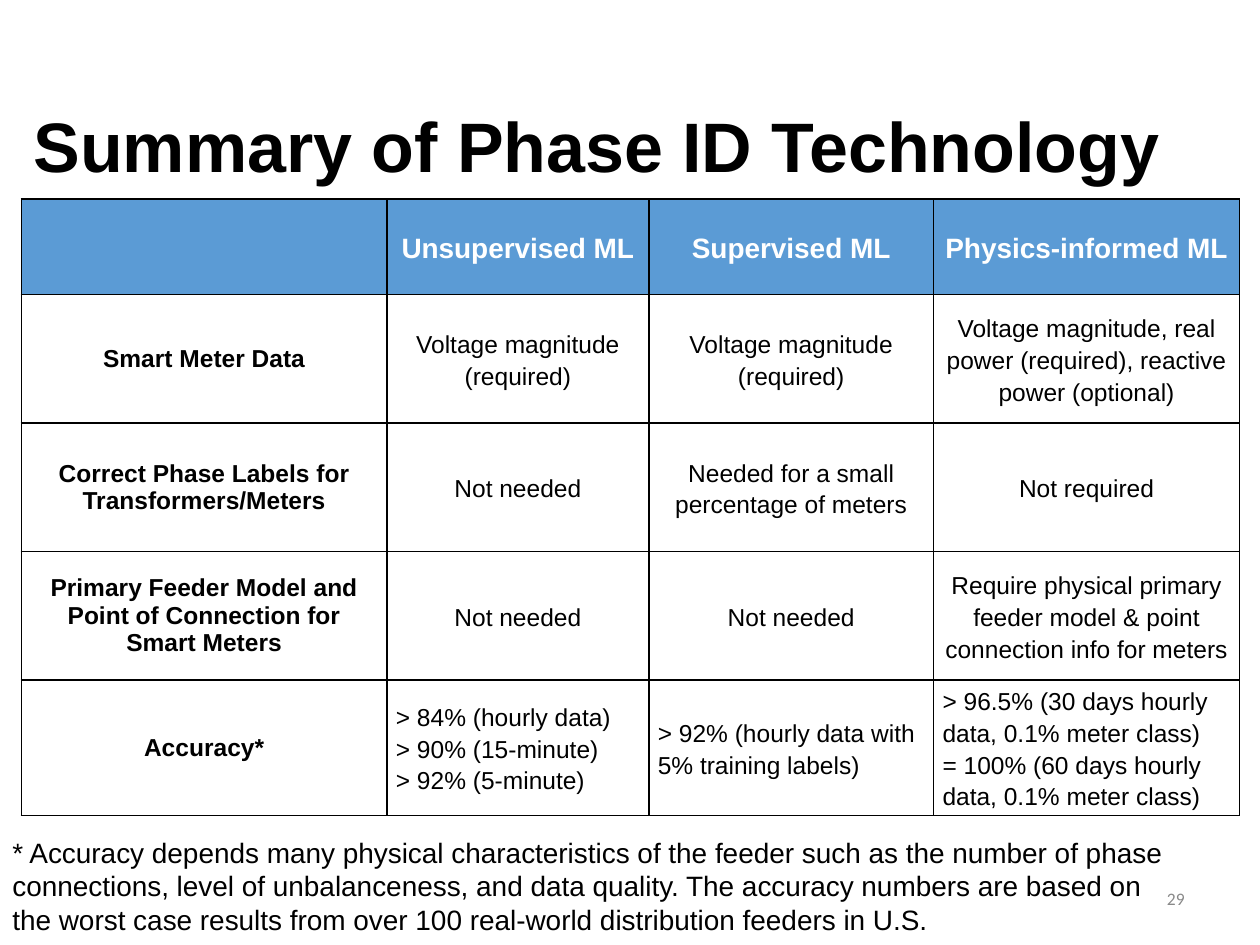
from dataclasses import dataclass

from lxml.etree import SubElement
from pptx import Presentation
from pptx.dml.color import RGBColor
from pptx.enum.text import MSO_ANCHOR, PP_ALIGN
from pptx.oxml.ns import qn
from pptx.util import Cm, Pt


@dataclass(frozen=True)
class Theme:
    black: str = "000000"
    white: str = "FFFFFF"
    grey: str = "898989"
    header_blue: str = "5B9BD5"
    font: str = "Arial"
    number_font: str = "Calibri"
    title_size: int = 40
    large_size: int = 16
    body_size: int = 14
    number_size: int = 10
    body_spacing: float = 1.15
    border: int = 1


@dataclass(frozen=True)
class TextStyle:
    size: int
    color: str
    font: str
    bold: bool = False
    align: PP_ALIGN = PP_ALIGN.LEFT
    spacing: float = 1.0


@dataclass(frozen=True)
class Caption:
    text: str
    left: float
    top: float
    width: float
    height: float
    style: TextStyle
    anchor: MSO_ANCHOR = MSO_ANCHOR.TOP


THEME = Theme()

# Text styles
TITLE = TextStyle(THEME.title_size, THEME.black, THEME.font, bold=True)
HEADER = TextStyle(THEME.large_size, THEME.white, THEME.font, True,
                   PP_ALIGN.CENTER, THEME.body_spacing)
CRITERION = TextStyle(THEME.body_size, THEME.black, THEME.font, True, PP_ALIGN.CENTER)
FINDING = TextStyle(THEME.body_size, THEME.black, THEME.font, False,
                    PP_ALIGN.CENTER, THEME.body_spacing)
ACCURACY = TextStyle(THEME.body_size, THEME.black, THEME.font,
                     spacing=THEME.body_spacing)
FOOTNOTE = TextStyle(THEME.large_size, THEME.black, THEME.font)
NUMBER = TextStyle(THEME.number_size, THEME.grey, THEME.number_font,
                   align=PP_ALIGN.RIGHT)

# Content: lengths in centimetres
CAPTIONS = [
    Caption("Summary of Phase ID Technology", 0.43, 2.34, 23.29, 1.55,
            TITLE, MSO_ANCHOR.BOTTOM),
    Caption("* Accuracy depends many physical characteristics of the feeder such as "
            "the number of phase connections, level of unbalanceness, and data quality. "
            "The accuracy numbers are based on the worst case results from over 100 "
            "real-world distribution feeders in U.S.", 0, 16.71, 24.13, 2.31, FOOTNOTE),
    Caption("29", 18.21, 17.78, 5.92, 0.84, NUMBER),
]
COLUMN_WIDTHS = [7.37, 5.28, 5.74, 6.17]
ROW_HEIGHTS = [1.93, 2.59, 2.59, 2.59, 2.34]
COMPARISON = [
    ["", "Unsupervised ML", "Supervised ML", "Physics-informed ML"],
    ["Smart Meter Data", "Voltage magnitude (required)", "Voltage magnitude (required)",
     "Voltage magnitude, real power (required), reactive power (optional)"],
    ["Correct Phase Labels for Transformers/Meters", "Not needed",
     "Needed for a small percentage of meters", "Not required"],
    ["Primary Feeder Model and Point of Connection for Smart Meters", "Not needed",
     "Not needed",
     "Require physical primary feeder model & point connection info for meters"],
    ["Accuracy*", "> 84% (hourly data)\n> 90% (15-minute)\n> 92% (5-minute)",
     "> 92% (hourly data with 5% training labels)",
     "> 96.5% (30 days hourly data, 0.1% meter class)\n"
     "= 100% (60 days hourly data, 0.1% meter class)"],
]


def set_all(target, values: dict) -> None:
    for name, value in values.items():
        setattr(target, name, value)


def write(frame, text: str, style: TextStyle) -> None:
    frame.text = text
    for paragraph in frame.paragraphs:
        set_all(paragraph, {"alignment": style.align, "line_spacing": style.spacing})
        set_all(paragraph.font, {"name": style.font, "size": Pt(style.size),
                                 "bold": style.bold})
        paragraph.font.color.rgb = RGBColor.from_string(style.color)


def add_caption(slide, caption: Caption) -> None:
    box = slide.shapes.add_textbox(Cm(caption.left), Cm(caption.top),
                                   Cm(caption.width), Cm(caption.height))
    set_all(box.text_frame, {"word_wrap": True, "vertical_anchor": caption.anchor})
    write(box.text_frame, caption.text, caption.style)


def add_borders(cell) -> None:
    properties = cell._tc.get_or_add_tcPr()
    for side in ("a:lnL", "a:lnR", "a:lnT", "a:lnB"):
        line = SubElement(properties, qn(side), w=str(Pt(THEME.border)))
        fill = SubElement(line, qn("a:solidFill"))
        SubElement(fill, qn("a:srgbClr"), val=THEME.black)


def cell_style(row: int, column: int) -> TextStyle:
    if row == 0:
        return HEADER
    if column == 0:
        return CRITERION
    return ACCURACY if row == len(COMPARISON) - 1 else FINDING


def add_comparison(slide, left: float, top: float) -> None:
    table = slide.shapes.add_table(
        len(ROW_HEIGHTS), len(COLUMN_WIDTHS), Cm(left), Cm(top),
        Cm(sum(COLUMN_WIDTHS)), Cm(sum(ROW_HEIGHTS))).table
    set_all(table, {"first_row": False, "horz_banding": False})
    for column, width in zip(table.columns, COLUMN_WIDTHS):
        column.width = Cm(width)
    for row, height in zip(table.rows, ROW_HEIGHTS):
        row.height = Cm(height)

    for r, entries in enumerate(COMPARISON):
        for c, entry in enumerate(entries):
            cell = table.cell(r, c)
            set_all(cell, {"margin_left": Cm(0.18), "margin_right": Cm(0.18),
                           "margin_top": 0, "margin_bottom": 0,
                           "vertical_anchor": MSO_ANCHOR.MIDDLE})
            add_borders(cell)
            if r == 0:
                cell.fill.solid()
                cell.fill.fore_color.rgb = RGBColor.from_string(THEME.header_blue)
            else:
                cell.fill.background()
            write(cell.text_frame, entry, cell_style(r, c))


def main() -> None:
    deck = Presentation()
    set_all(deck, {"slide_width": Cm(25.4), "slide_height": Cm(19.05)})
    slide = deck.slides.add_slide(deck.slide_layouts[6])

    # Title, comparison table, then footnote and slide number
    title, *notes = CAPTIONS
    add_caption(slide, title)
    add_comparison(slide, 0.43, 4.01)
    for note in notes:
        add_caption(slide, note)

    deck.save("out.pptx")


if __name__ == "__main__":
    main()
